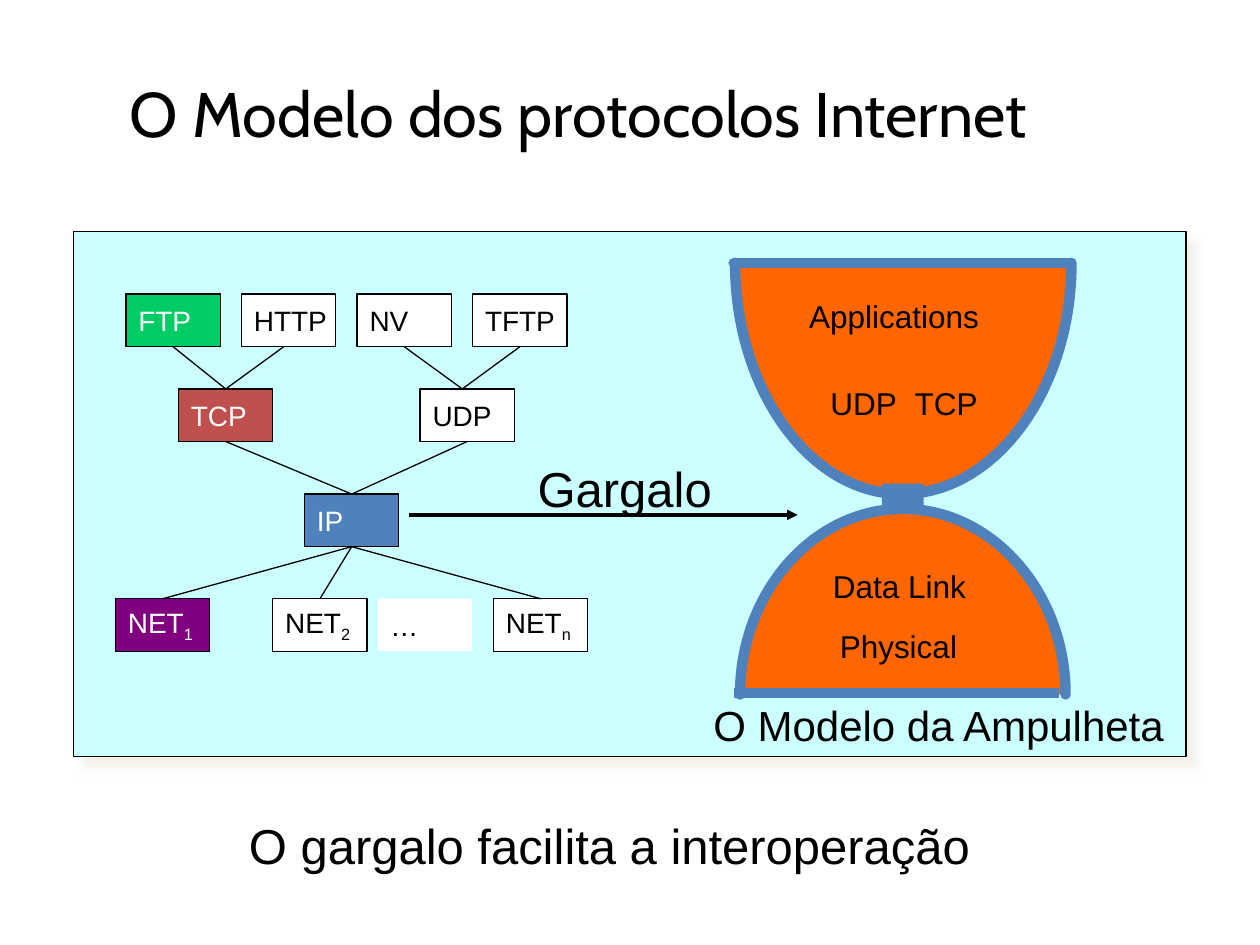
from copy import deepcopy

from lxml import etree
from pptx import Presentation
from pptx.dml.color import RGBColor
from pptx.enum.shapes import MSO_CONNECTOR, MSO_SHAPE
from pptx.enum.text import MSO_ANCHOR, MSO_AUTO_SIZE, PP_ALIGN
from pptx.oxml.ns import qn
from pptx.util import Cm, Pt

RECT, STRAIGHT = MSO_SHAPE.RECTANGLE, MSO_CONNECTOR.STRAIGHT
MIDDLE, BOTTOM = MSO_ANCHOR.MIDDLE, MSO_ANCHOR.BOTTOM
LEFT, CENTER = PP_ALIGN.LEFT, PP_ALIGN.CENTER
GROW = MSO_AUTO_SIZE.SHAPE_TO_FIT_TEXT

THEME = {
    "head": "Cabin", "body": "Arial",
    "black": "000000", "white": "FFFFFF", "panel": "CCFFFF", "shade": "EEECE1",
    "orange": "FF6600", "blue": "4F81BD", "green": "00CC66", "red": "C0504D",
    "purple": "800080",
    "title": 36, "large": 28, "medium": 24, "label": 18, "node": 16,
    "thin": 0.75, "arrow": 2, "thick": 6,
}

# Content; all lengths in cm
TITLE = ("O Modelo dos protocolos Internet", 1.31, 1.07, 20.7, 2.08)
PANEL = (1.48, 4.67, 22.43, 10.58)
ARROW = (8.25, 10.38, 16.08, 10.38)

# Quarter ellipses: centre x, centre y, signed radii
ARCS = [
    (18.2, 14, 3.28, -3.74), (18.2, 14, -3.28, -3.74),
    (18.18, 5.3, 3.42, 4.66), (18.18, 5.3, -3.36, 4.66),
]
RIM = (14.79, 5.3, 21.57, 5.3)
BASE = (14.79, 13.97, 21.34, 13.97)
NECK = (17.78, 9.75, 0.84, 0.61)

# Text, left, top, width, height, size, wrap
LABELS = [
    ("UDP", 16.49, 7.62, 1.85, 1.02, "label", False),
    ("TCP", 18.19, 7.62, 1.78, 1.02, "label", False),
    ("Data Link", 16.54, 11.3, 3.23, 1.02, "label", False),
    ("Physical", 16.68, 12.52, 2.9, 1.02, "label", False),
    ("Applications", 16.06, 5.87, 3.99, 1.02, "label", False),
    ("O Modelo da Ampulheta", 14.13, 13.97, 9.68, 1.27, "medium", False),
    ("Gargalo", 10.59, 9.12, 4.45, 1.45, "large", True),
    ("O gargalo facilita a interoperação", 4.77, 16.32, 16.71, 1.45, "large", True),
]

# Top of each row, then its nodes: name, subscript, left, fill
NODE_W, NODE_H = 1.9, 1.06
ROWS = [
    (5.93, [("FTP", "", 2.54, "green"), ("HTTP", "", 4.87, "white"),
            ("NV", "", 7.2, "white"), ("TFTP", "", 9.53, "white")]),
    (7.84, [("TCP", "", 3.6, "red"), ("UDP", "", 8.47, "white")]),
    (9.96, [("IP", "", 6.14, "blue")]),
    (12.07, [("NET", "1", 2.33, "purple"), ("NET", "2", 5.5, "white"),
             ("…", "", 7.62, "white"), ("NET", "n", 9.95, "white")]),
]
# Upper node, lower node, shift of each end from the middle of the side
LINKS = [
    ("FTP", "TCP", 0, 0), ("HTTP", "TCP", -0.1, 0),
    ("NV", "UDP", 0, -0.1), ("TFTP", "UDP", 0, -0.1),
    ("TCP", "IP", 0, 0), ("UDP", "IP", 0, 0),
    ("IP", "NETn", 0, 0), ("IP", "NET1", 0, 0), ("IP", "NET2", 0, 0),
]

deck = Presentation()
deck.slide_width, deck.slide_height = Cm(25.4), Cm(19.05)
slide = deck.slides.add_slide(deck.slide_layouts[6])
shapes = slide.shapes


def tint(name):
    return RGBColor.from_string(THEME[name])


def cms(*vals):
    return [Cm(v) for v in vals]


def paint(shape, fill, line=None, width="thin"):
    shape.shadow.inherit = False
    shape.fill.solid()
    shape.fill.fore_color.rgb = tint(fill)
    if line:
        shape.line.color.rgb = tint(line)
        shape.line.width = Pt(THEME[width])
    else:
        shape.line.fill.background()


def box(rect, fill, line=None):
    shape = shapes.add_shape(RECT, *cms(*rect))
    paint(shape, fill, line)
    return shape


def add_run(para, text, size, color="black", font="body"):
    run = para.add_run()
    run.text = text
    run.font.name = THEME[font]
    run.font.size = Pt(THEME[size])
    run.font.color.rgb = tint(color)
    return run


def label(text, x, y, w, h, size, wrap, font="body"):
    frame = shapes.add_textbox(*cms(x, y, w, h)).text_frame
    frame.word_wrap = wrap
    add_run(frame.paragraphs[0], text, size, font=font)
    return frame


def wire(ends, color="black", width="thin"):
    line = shapes.add_connector(STRAIGHT, *ends)
    line.line.color.rgb = tint(color)
    line.line.width = Pt(THEME[width])
    etree.SubElement(line._element.spPr, qn("a:effectLst"))
    return line


def round_cap(shape):
    shape.line._get_or_add_ln().set("cap", "rnd")


def quarter(cx, cy, rx, ry, bend=0.55):
    """Fill a quarter ellipse, but stroke only its curve."""
    pen = shapes.build_freeform(*cms(cx + rx, cy))
    pen.add_line_segments([cms(cx, cy + ry), cms(cx, cy)], close=True)
    shape = pen.convert_to_shape()
    paint(shape, "orange", "blue", "thick")
    round_cap(shape)
    area = shape._element.spPr.find(".//" + qn("a:path"))
    # Bend the first side into one Bezier curve
    (sx, sy), (ex, ey) = [(int(p.get("x")), int(p.get("y")))
                          for p in list(area.iter(qn("a:pt")))[:2]]
    curve = etree.Element(qn("a:cubicBezTo"))
    for x, y in [(sx, sy + bend * (ey - sy)), (ex + bend * (sx - ex), ey), (ex, ey)]:
        etree.SubElement(curve, qn("a:pt"), x=str(round(x)), y=str(round(y)))
    area.replace(area[1], curve)
    edge = deepcopy(area)
    for part in edge[2:]:
        edge.remove(part)
    edge.set("fill", "none")
    area.set("stroke", "0")
    area.addprevious(edge)


# Title
head = label(*TITLE, "title", True, "head")
head.vertical_anchor = BOTTOM
head.paragraphs[0].alignment = CENTER

# Panel with its shadow
panel = box(PANEL, "panel", "black")
glow = etree.SubElement(
    panel._element.spPr.find(qn("a:effectLst")), qn("a:outerShdw"),
    blurRad=str(Pt(5)), dist=str(Pt(8.5)), dir="2700000", algn="ctr", rotWithShape="0")
shade = etree.SubElement(glow, qn("a:srgbClr"), val=THEME["shade"])
etree.SubElement(shade, qn("a:alpha"), val="75000")

# Arrow to the bottleneck
arrow = wire(cms(*ARROW), width="arrow")
etree.SubElement(arrow.line._get_or_add_ln(), qn("a:tailEnd"), type="triangle")

# Hourglass
for arc in ARCS:
    quarter(*arc)
round_cap(wire(cms(*RIM), "blue", "thick"))
wire(cms(*BASE), "blue", "thick")
box(NECK, "blue")

# Labels
for item in LABELS:
    label(*item).auto_size = GROW

# Protocol nodes
nodes = {}
for top, row in ROWS:
    for name, sub, left, fill in row:
        node = box((left, top, NODE_W, NODE_H), fill, None if name == "…" else "black")
        frame = node.text_frame
        frame.word_wrap = False
        frame.vertical_anchor = MIDDLE
        para = frame.paragraphs[0]
        para.alignment = LEFT
        ink = "black" if fill == "white" else "white"
        add_run(para, name, "node", ink)
        if sub:
            low = add_run(para, sub, "node", ink)
            low.font._element.set("baseline", "-25000")
        nodes[name + sub] = node

# Links between nodes, joined where they meet the middle of a side
for upper, lower, start, end in LINKS:
    a, b = nodes[upper], nodes[lower]
    link = wire((a.left + a.width // 2 + Cm(start), a.top + a.height,
                 b.left + b.width // 2 + Cm(end), b.top))
    if not start:
        link.begin_connect(a, 2)
    if not end:
        link.end_connect(b, 0)

deck.save("out.pptx")
